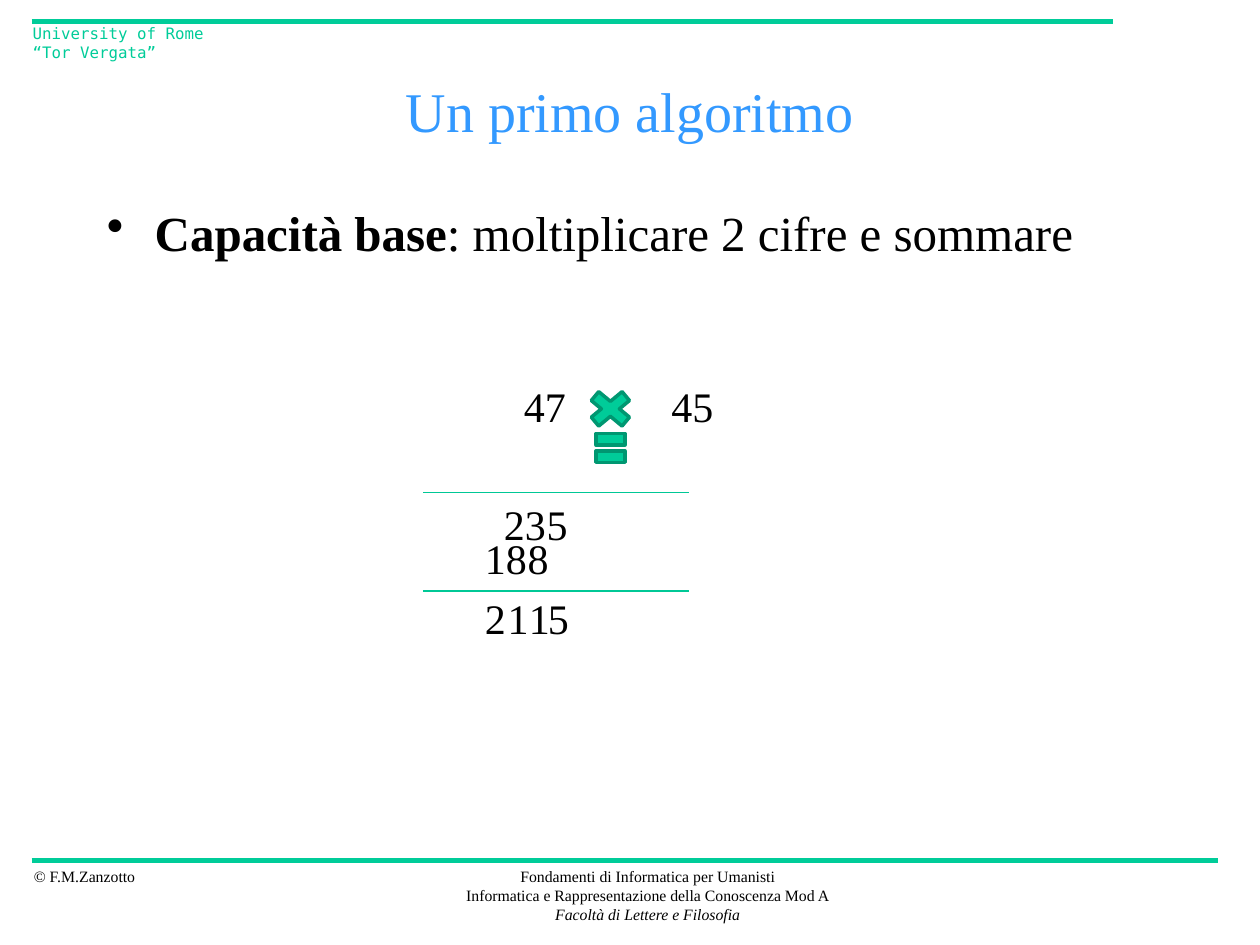
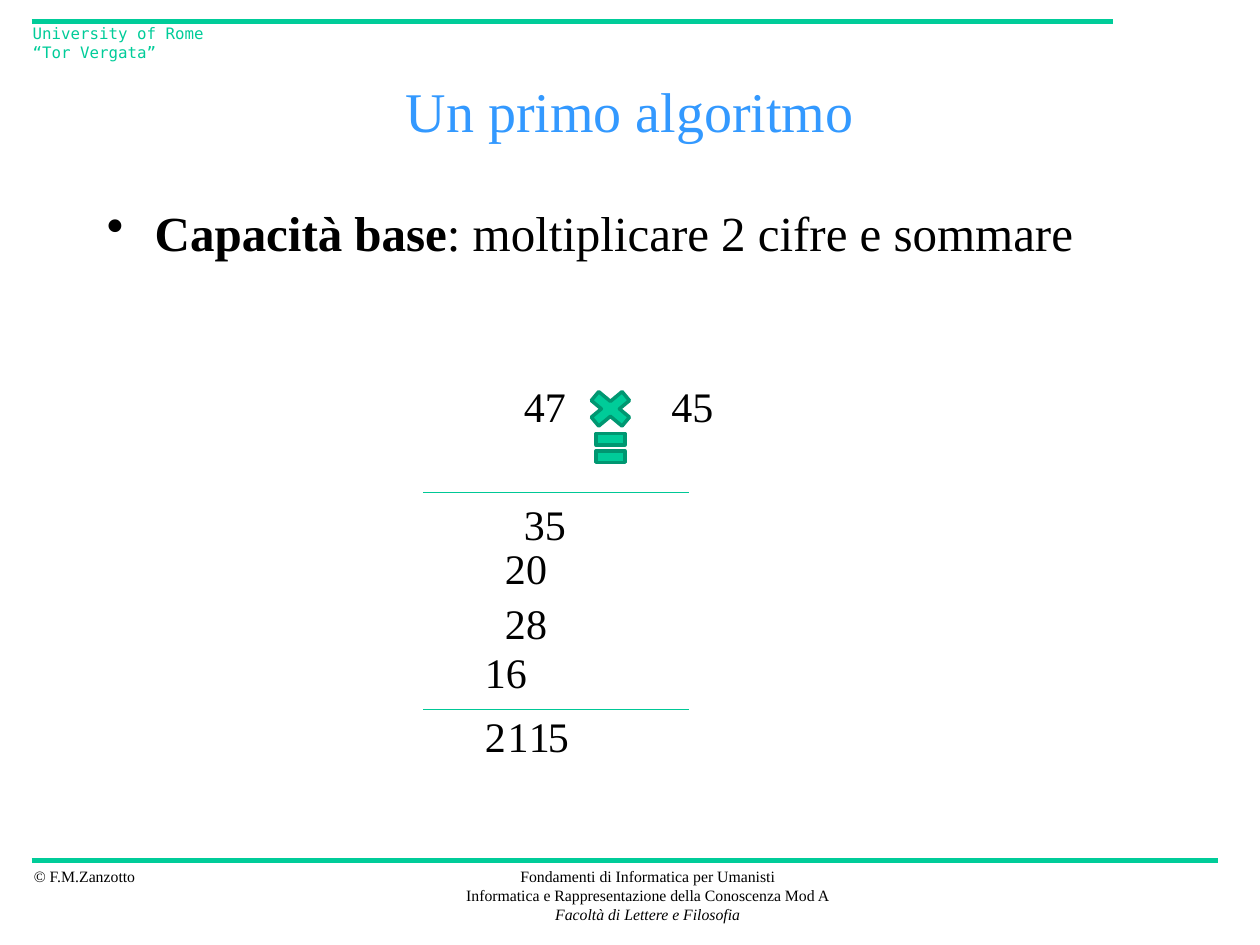
from lxml import etree
from pptx import Presentation
from pptx.dml.color import RGBColor
from pptx.enum.shapes import MSO_CONNECTOR, MSO_SHAPE
from pptx.enum.text import MSO_ANCHOR, MSO_AUTO_SIZE, PP_ALIGN
from pptx.oxml.ns import qn
from pptx.util import Inches, Pt

LINE = MSO_CONNECTOR.STRAIGHT
TIMES, EQUAL = MSO_SHAPE.MATH_MULTIPLY, MSO_SHAPE.MATH_EQUAL
LEFT, CENTER = PP_ALIGN.LEFT, PP_ALIGN.CENTER
MIDDLE, TOP = MSO_ANCHOR.MIDDLE, MSO_ANCHOR.TOP
GROW, FIXED = MSO_AUTO_SIZE.SHAPE_TO_FIT_TEXT, MSO_AUTO_SIZE.NONE

SERIF, MONO = "Times New Roman", "DejaVu Sans Mono"
COLORS = {"text": "000000", "title": "3399FF", "band": "00CC99",
          "rule": "00C896", "edge": "009771"}
# Offsets in inches from the corner of the sum
DIGITS = (0.39, 0.57, 0.74, 0.89)
FIRST_RULE = 0.94
SUM_BOX = (3.36, 2.97, 2.41)

# Partial products as (text, left, top), then the height of the last rule
SUMS = [
    ([("5", 0.88, 0.94), ("23", 0.54, 0.94),
      ("8", 0.73, 1.21), ("18", 0.39, 1.21)], 1.72),
    ([("35", 0.70, 0.94), ("20", 0.55, 1.29),
      ("28", 0.55, 1.72), ("16", 0.39, 2.11)], 2.66),
]


def color(name):
    return RGBColor.from_string(COLORS[name])


def add_run(para, text, size, tint="text", face=SERIF, bold=False, italic=False):
    run = para.add_run()
    run.text = text
    font = run.font
    font.size, font.name = Pt(size), face
    font.bold, font.italic = bold, italic
    font.color.rgb = color(tint)


def add_label(slide, box, lines, size, tint="text", face=SERIF, align=LEFT):
    """Add an unwrapped text box; each line is a (text, italic) pair."""
    frame = slide.shapes.add_textbox(*map(Inches, box)).text_frame
    frame.word_wrap = False
    frame.auto_size = GROW
    for i, (text, italic) in enumerate(lines):
        para = frame.add_paragraph() if i else frame.paragraphs[0]
        para.alignment = align
        add_run(para, text, size, tint, face, italic=italic)


def add_rule(slide, left, top, width, tint, weight):
    rule = slide.shapes.add_connector(
        LINE, Inches(left), Inches(top), Inches(left + width), Inches(top))
    rule.line.color.rgb = color(tint)
    rule.line.width = Pt(weight)
    etree.SubElement(rule._element.spPr, qn("a:effectLst"))


def add_sign(slide, kind, box):
    sign = slide.shapes.add_shape(kind, *map(Inches, box))
    sign.shadow.inherit = False
    sign.fill.solid()
    sign.fill.fore_color.rgb = color("band")
    sign.line.color.rgb = color("edge")
    sign.line.width = Pt(2)


def add_header(slide, left, top):
    add_rule(slide, left, top, 8.58, "band", 3)
    add_label(slide, (left - 0.09, top - 0.03, 1.71, 0.25),
              [("University of Rome", False), ("“Tor Vergata”", False)],
              9, "band", MONO)


def add_footer(slide, left, top):
    add_rule(slide, left, top, 9.42, "band", 3)
    add_label(slide, (left - 0.08, top, 1.02, 0.25), [("© F.M.Zanzotto", False)], 9)
    add_label(slide, (left + 3.33, top, 3.12, 0.56),
              [("Fondamenti di Informatica per Umanisti", False),
               ("Informatica e Rappresentazione della Conoscenza Mod A", False),
               ("Facoltà di Lettere e Filosofia", True)], 9, align=CENTER)


def set_title(slide, box, text):
    title = slide.shapes.title
    title.left, title.top, title.width, title.height = map(Inches, box)
    frame = title.text_frame
    frame.auto_size = FIXED
    frame.vertical_anchor = MIDDLE
    para = frame.paragraphs[0]
    para.alignment = CENTER
    add_run(para, text, 32, "title")


def add_bullet(slide, box, lead, rest):
    frame = slide.shapes.add_textbox(*map(Inches, box)).text_frame
    frame.word_wrap = True
    frame.vertical_anchor = TOP
    frame.margin_top = Inches(0.11)
    para = frame.paragraphs[0]
    props = para._p.get_or_add_pPr()
    props.set("marL", str(Inches(0.38)))
    props.set("indent", str(-Inches(0.38)))
    etree.SubElement(props, qn("a:buChar"), char="•")
    add_run(para, lead, 28, bold=True)
    add_run(para, rest, 28)


def add_number(slide, text, left, top):
    add_label(slide, (left, top, 0.2 + 0.17 * len(text), 0.5), [(text, False)], 24)


def add_sum(slide, left, top, width, parts, last):
    """Set out 47 × 45, its partial products and the total."""
    add_number(slide, "47", left + 0.7, top)
    add_number(slide, "45", left + width - 0.54, top)
    add_sign(slide, EQUAL, (left + 1.33, top + 0.39, 0.31, 0.39))
    add_sign(slide, TIMES, (left + 1.25, top + 0.08, 0.47, 0.39))
    for height in (FIRST_RULE, last):
        add_rule(slide, left, top + height, width - 0.3, "rule", 0.75)
    for text, x, y in parts:
        add_number(slide, text, left + x, top + y)
    for digit, x in zip("2115", DIGITS):
        add_number(slide, digit, left + x, top + last - 0.04)


def add_slide(deck, parts, last):
    slide = deck.slides.add_slide(deck.slide_layouts[5])
    add_footer(slide, 0.25, 6.83)
    add_header(slide, 0.25, 0.17)
    set_title(slide, (0.75, 0.5, 8.5, 0.75), "Un primo algoritmo")
    add_bullet(slide, (0.75, 1.5, 8.5, 0.77),
               "Capacità base", ": moltiplicare 2 cifre e sommare")
    add_sum(slide, *SUM_BOX, parts, last)


def main():
    deck = Presentation()
    deck.slide_width, deck.slide_height = Inches(10), Inches(7.5)
    for parts, last in SUMS:
        add_slide(deck, parts, last)
    deck.save("out.pptx")


if __name__ == "__main__":
    main()
